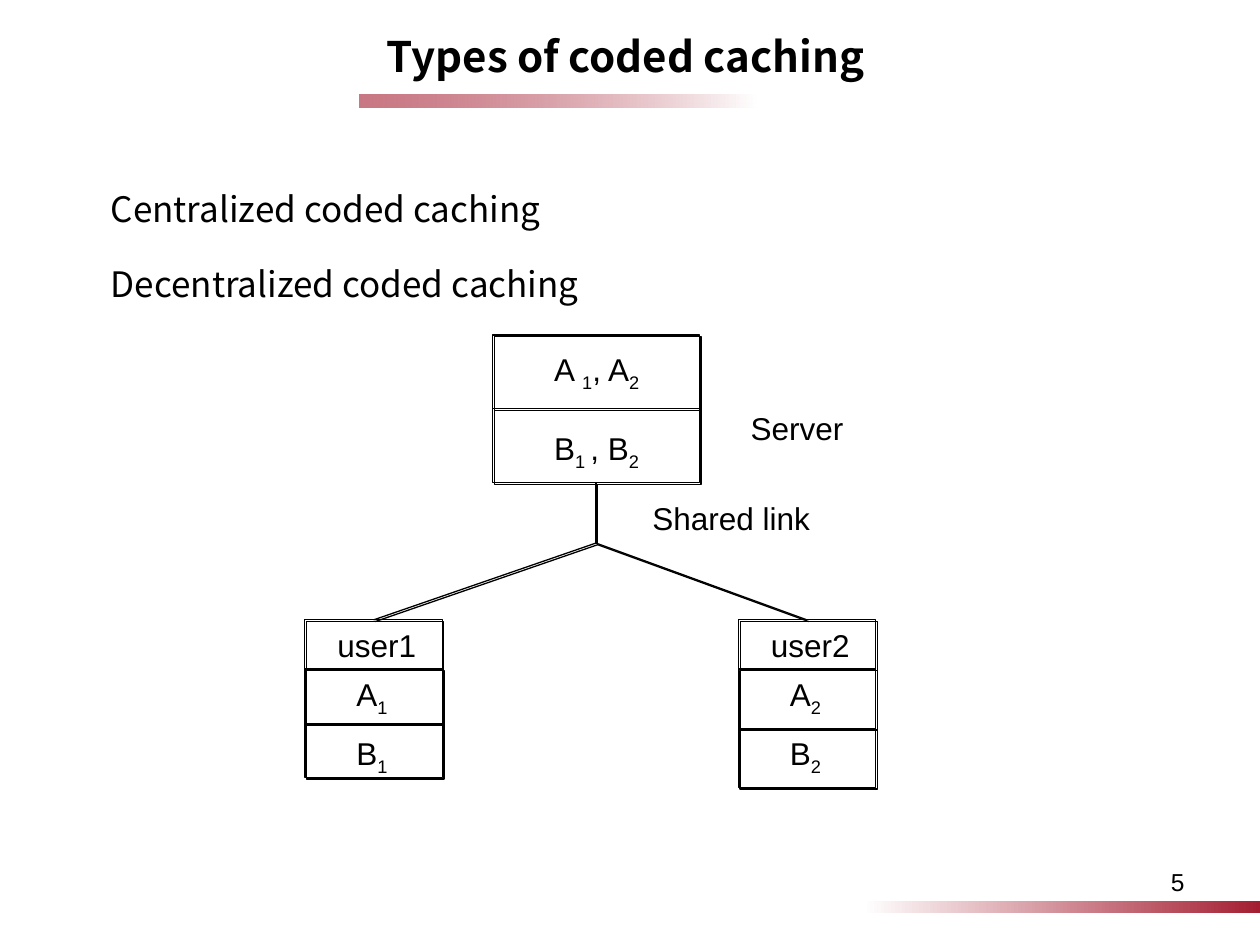
"""Build the slide on types of coded caching, with its server and user diagram."""
from pptx import Presentation
from pptx.dml.color import RGBColor
from pptx.enum.shapes import MSO_CONNECTOR, MSO_SHAPE
from pptx.enum.text import PP_ALIGN
from pptx.oxml.ns import qn
from pptx.util import Pt
from lxml import etree

RECT = MSO_SHAPE.RECTANGLE
STRAIGHT = MSO_CONNECTOR.STRAIGHT
LEFT, RIGHT = PP_ALIGN.LEFT, PP_ALIGN.RIGHT
TOP_SIDE, LEFT_SIDE, BOTTOM_SIDE, RIGHT_SIDE = range(4)
PX = 9144

THEME = {
    "ink": "000000", "paper": "FFFFFF", "accent": "A41E31",
    "head_font": "Noto Sans CJK SC", "font": "Arial",
    "title": 24, "body": 20, "label": 18, "number": 14,
    "thin": 0.5, "line": 0.75,
}

TITLE = "Types of coded caching"
TYPES = ["Centralized coded caching", "Decentralized coded caching"]
PAGE = "5"
BARS = [
    {"box": (285, 75, 315, 10), "rotation": 180, "opacity": 60},
    {"box": (685, 715, 315, 10), "rotation": 0, "opacity": 100},
]
SERVER = {"box": (391, 266, 164, 117), "files": ["A ~1~, A~2~", "B~1 ~, B~2~"]}
USERS = [
    {"name": "user1", "left": 242, "height": 86, "files": ["A~1~", "B~1~"]},
    {"name": "user2", "left": 586, "height": 94, "files": ["A~2~", "B~2~"]},
]
USER_TOP, USER_W, NAME_H = 492, 109, 39
HUB = (473, 431)
CAPTIONS = [("Server", (586, 320, 95, 40)), ("Shared link", (508, 391, 146, 40))]


def emu(lengths):
    return [n * PX for n in lengths]


def color(name):
    return RGBColor.from_string(THEME[name])


def add_text(s, text, box, size="label", font="font", bold=False,
             align=LEFT, wrap=False, gap=0):
    """Add a text box of one or more lines; tildes enclose subscripts."""
    tf = s.shapes.add_textbox(*emu(box)).text_frame
    tf.word_wrap = wrap
    lines = [text] if isinstance(text, str) else text
    for i, line in enumerate(lines):
        p = tf.add_paragraph() if i else tf.paragraphs[0]
        p.alignment = align
        if i:
            p.space_before = Pt(gap)
        for j, part in enumerate(line.split("~")):
            if not part:
                continue
            r = p.add_run()
            r.text = part
            r.font.size = Pt(THEME[size])
            r.font.name = THEME[font]
            r.font.bold = bold
            r.font.color.rgb = color("ink")
            if j % 2:
                r._r.get_or_add_rPr().set("baseline", "-25000")


def outline(shape, width="line"):
    """Give a shape or connector a black line and a hard offset shadow."""
    shape.line.color.rgb = color("ink")
    shape.line.width = Pt(THEME[width])
    effects = etree.SubElement(shape._element.spPr, qn("a:effectLst"))
    shadow = etree.SubElement(effects, qn("a:outerShdw"),
                              dist=str(Pt(1.4)), dir="2700000", algn="ctr", rotWithShape="0")
    etree.SubElement(shadow, qn("a:srgbClr"), val=THEME["ink"])


def add_box(s, box, width="line"):
    sp = s.shapes.add_shape(RECT, *emu(box))
    sp.fill.background()
    outline(sp, width)
    return sp


def add_line(s, start, side, end, end_side=None):
    """Join a side of a box to a point, or to a side of another box."""
    target = (0, 0) if end_side is not None else end
    line = s.shapes.add_connector(STRAIGHT, 0, 0, *emu(target))
    line.begin_connect(start, side)
    if end_side is not None:
        line.end_connect(end, end_side)
    outline(line)


def add_store(s, box, files, indent, tops, text_w):
    """Add a box halved by a line, with one file label in each half."""
    left, top = box[:2]
    sp = add_box(s, box)
    add_line(s, sp, LEFT_SIDE, sp, RIGHT_SIDE)
    for text, dy in zip(files, tops):
        add_text(s, text, (left + indent, top + dy, text_w, 40))
    return sp


def add_bar(s, box, rotation, opacity):
    sp = s.shapes.add_shape(RECT, *emu(box))
    sp.rotation = rotation
    sp.shadow.inherit = False
    sp.line.fill.background()
    sp.fill.gradient()
    sp.fill.gradient_angle = 0
    for stop, name in zip(sp.fill.gradient_stops, ("paper", "accent")):
        stop.color.rgb = color(name)
    accent = list(sp._element.spPr.iter(qn("a:srgbClr")))[-1]
    etree.SubElement(accent, qn("a:alpha"), val=str(opacity * 1000))


def main():
    prs = Presentation()
    prs.slide_width, prs.slide_height = emu((1000, 750))
    s = prs.slides.add_slide(prs.slide_layouts[6])

    for bar in BARS:
        add_bar(s, **bar)
    add_text(s, PAGE, (717, 683, 233, 52), size="number", align=RIGHT, wrap=True)
    add_text(s, TITLE, (297, 19, 438, 50), size="title", font="head_font", bold=True)
    add_text(s, TYPES, (78, 144, 789, 111), size="body", font="head_font", wrap=True, gap=19)

    server = add_store(s, SERVER["box"], SERVER["files"], 39, (7, 70), 91)
    add_line(s, server, BOTTOM_SIDE, HUB)
    for user in USERS:
        left = user["left"]
        name_box = add_box(s, (left, USER_TOP, USER_W, NAME_H), "thin")
        add_text(s, user["name"], (left + 16, USER_TOP, 83, 40))
        add_line(s, name_box, TOP_SIDE, HUB)
        add_store(s, (left, USER_TOP + NAME_H, USER_W, user["height"]),
                  user["files"], 31, (0, 47), 46)
    for text, box in CAPTIONS:
        add_text(s, text, box)

    prs.save("out.pptx")


if __name__ == "__main__":
    main()
